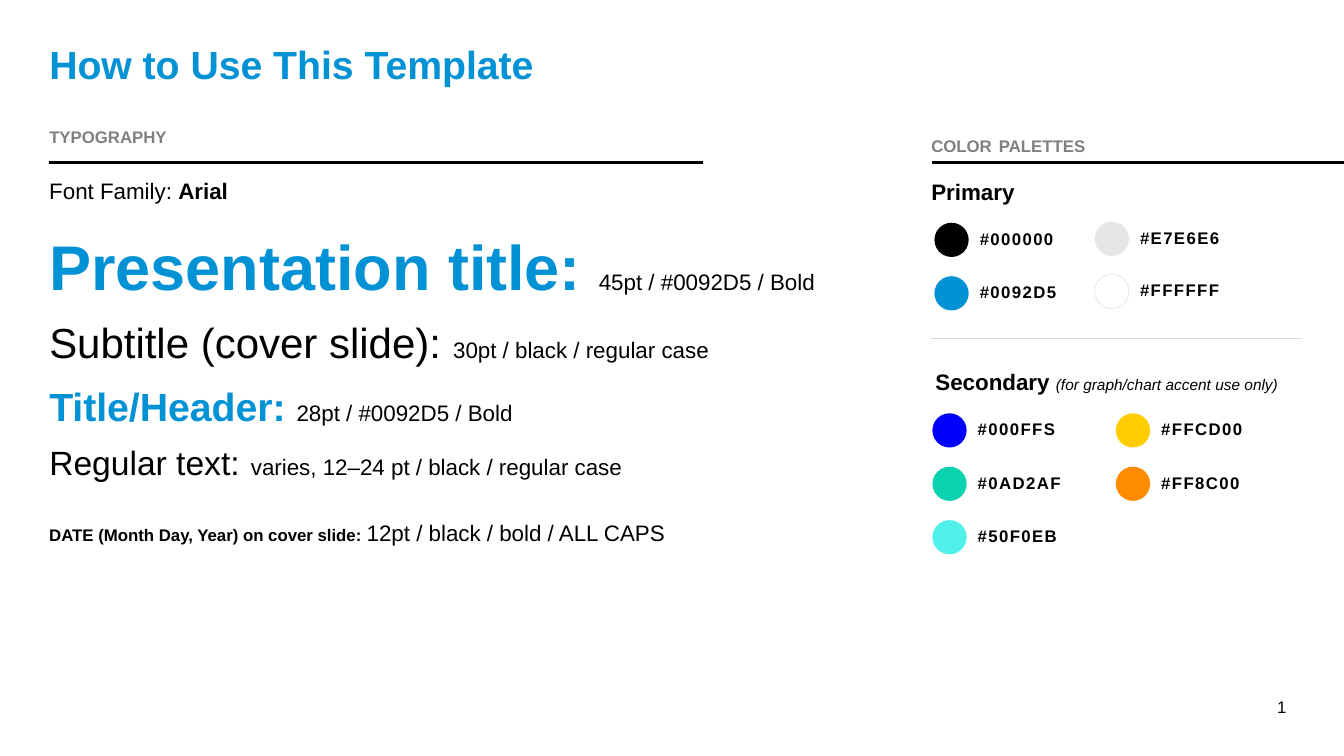
from dataclasses import dataclass
from typing import Any, Optional

from pptx import Presentation
from pptx.dml.color import RGBColor
from pptx.enum.shapes import MSO_CONNECTOR, MSO_SHAPE
from pptx.enum.text import MSO_ANCHOR, MSO_AUTO_SIZE, PP_ALIGN
from pptx.oxml import parse_xml
from pptx.oxml.ns import nsdecls, qn
from pptx.util import Inches, Pt

TOP, MIDDLE, BOTTOM = MSO_ANCHOR.TOP, MSO_ANCHOR.MIDDLE, MSO_ANCHOR.BOTTOM
LEFT, RIGHT = PP_ALIGN.LEFT, PP_ALIGN.RIGHT
GROW, FIXED = MSO_AUTO_SIZE.SHAPE_TO_FIT_TEXT, MSO_AUTO_SIZE.NONE
ELLIPSE, STRAIGHT = MSO_SHAPE.OVAL, MSO_CONNECTOR.STRAIGHT

CELL = Inches(0.1)
COLUMNS, ROWS = 133.33, 75
MARGIN = 3.9
RULE_ROW = 16.1
DOT = 3.4
LABEL_SHIFT = 4.5

BLACK, BLUE, GRAY = "000000", "0092D5", "808080"
PALE, WHITE, DIVIDER = "E7E6E6", "FFFFFF", "D9D9D9"

NORMAL = (1, 0.5, 1, 0.5)
FLUSH = (0, 0, 0, 0)
SIDES = (1, 0, 1, 0)


@dataclass(frozen=True)
class Span:
    text: str
    size: float = 16
    color: str = BLACK
    bold: bool = False
    italic: bool = False
    tracking: float = 0
    is_page_number: bool = False


@dataclass(frozen=True)
class TextBlock:
    left: float
    top: float
    width: float
    height: float
    spans: tuple[Span, ...]
    anchor: Any = TOP
    insets: tuple[float, ...] = NORMAL
    fit: Any = GROW
    wrap: bool = True
    spacing: float = 0.9
    align: Any = LEFT


@dataclass(frozen=True)
class Rule:
    start: float
    end: float
    row: float
    color: str = BLACK
    weight: float = 1.75


@dataclass(frozen=True)
class Swatch:
    label: str
    fill: str
    outline: Optional[str] = None


@dataclass(frozen=True)
class SwatchColumn:
    left: float
    top: float
    pitch: float
    swatches: tuple[Swatch, ...]


TEXTS = (
    TextBlock(MARGIN, 4, 123.2, 7.7,
              (Span("How to Use This Template", 28, BLUE, True),), fit=FIXED),
    TextBlock(MARGIN, 12.1, 13.8, 3,
              (Span("TYPOGRAPHY", 12, GRAY, True),), wrap=False, spacing=1),
    TextBlock(MARGIN, 17.9, 52.4, 2.4,
              (Span("Font Family: "), Span("Arial", bold=True)),
              BOTTOM, (1, 0, 0, 0)),
    TextBlock(MARGIN, 22.9, 79.4, 7.7,
              (Span("Presentation title: ", 45, BLUE, True),
               Span("45pt / #0092D5 / Bold")), fit=FIXED),
    TextBlock(MARGIN, 31.5, 94.1, 6.9,
              (Span("Subtitle (cover slide): ", 30),
               Span("30pt / black / regular case")), fit=FIXED),
    TextBlock(MARGIN, 38, 57.2, 5.3,
              (Span("Title/Header: ", 28, BLUE, True),
               Span("28pt / #0092D5 / Bold"))),
    TextBlock(MARGIN, 43.6, 59.5, 4.5,
              (Span("Regular text:", 24), Span("\t", 30),
               Span("varies, 12–24 pt / black / regular case")), insets=SIDES),
    TextBlock(MARGIN, 51, 85, 3.8,
              (Span("DATE (Month Day, Year) on cover slide: ", 12, bold=True),
               Span("12pt / black / bold / ALL CAPS")), fit=FIXED, spacing=1),
    TextBlock(91.4, 12.1, 17.5, 4,
              (Span("COLOR", 12, GRAY, True), Span(" ", 18, GRAY),
               Span("PALETTES", 12, GRAY, True)), wrap=False, spacing=1),
    TextBlock(92.4, 17.9, 12.3, 2.5,
              (Span("Primary", bold=True),), BOTTOM, FLUSH),
    TextBlock(92.8, 36.8, 35.2, 2.4,
              (Span("Secondary ", bold=True),
               Span("(for graph/chart accent use only)", 11, italic=True)),
              BOTTOM, FLUSH),
    TextBlock(98.6, 68.1, 30, 4, (Span("1", 12, is_page_number=True),),
              MIDDLE, fit=FIXED, spacing=1, align=RIGHT),
)

RULES = (
    Rule(4.9, 69.7, RULE_ROW),
    Rule(92.5, COLUMNS, RULE_ROW),
    Rule(92.4, 129.2, 33.6, DIVIDER, 0.5),
)

PALETTES = (
    SwatchColumn(92.7, 22.1, 5.3, (
        Swatch("#000000", BLACK), Swatch("#0092D5", BLUE))),
    SwatchColumn(108.6, 22, 5.2, (
        Swatch("#E7E6E6", PALE), Swatch("#FFFFFF", WHITE, PALE))),
    SwatchColumn(92.5, 41, 5.3, (
        Swatch("#000FFS", "0000FF"), Swatch("#0AD2AF", "0AD2AF"),
        Swatch("#50F0EB", "50F0EB"))),
    SwatchColumn(110.7, 41, 5.3, (
        Swatch("#FFCD00", "FFCD00"), Swatch("#FF8C00", "FF8C00"))),
)


def cells(count: float) -> int:
    return round(count * CELL)


def color(value: str) -> RGBColor:
    return RGBColor.from_string(value)


def set_format(target: Any, values: dict[str, Any]) -> None:
    for name, value in values.items():
        setattr(target, name, value)


def add_span(paragraph: Any, span: Span) -> None:
    run = paragraph.add_run()
    run.text = span.text
    set_format(run.font, {"name": "Arial", "size": Pt(span.size),
                          "bold": span.bold, "italic": span.italic})
    run.font.color.rgb = color(span.color)
    if span.tracking:
        run._r.get_or_add_rPr().set("spc", str(round(span.tracking * 100)))
    if span.is_page_number:
        field = run._r
        field.tag = qn("a:fld")
        field.set("id", "{B6F15528-21DE-4FAA-801E-634DDDAF4B2B}")
        field.set("type", "slidenum")


def add_text(slide: Any, block: TextBlock) -> None:
    box = slide.shapes.add_textbox(
        *map(cells, (block.left, block.top, block.width, block.height)))
    frame = box.text_frame
    sides = ("margin_left", "margin_top", "margin_right", "margin_bottom")
    set_format(frame, {"word_wrap": block.wrap, "auto_size": block.fit,
                       "vertical_anchor": block.anchor,
                       **dict(zip(sides, map(cells, block.insets)))})
    paragraph = frame.paragraphs[0]
    set_format(paragraph, {"line_spacing": block.spacing, "alignment": block.align})
    for span in block.spans:
        add_span(paragraph, span)


def add_rule(slide: Any, rule: Rule) -> None:
    row = cells(rule.row)
    connector = slide.shapes.add_connector(
        STRAIGHT, cells(rule.start), row, cells(rule.end), row)
    connector.line.color.rgb = color(rule.color)
    connector.line.width = Pt(rule.weight)
    connector._element.spPr.append(parse_xml(f"<a:effectLst {nsdecls('a')}/>"))


def add_swatch(slide: Any, left: float, top: float, swatch: Swatch) -> None:
    dot = slide.shapes.add_shape(ELLIPSE, *map(cells, (left, top, DOT, DOT)))
    dot.shadow.inherit = False
    dot.fill.solid()
    dot.fill.fore_color.rgb = color(swatch.fill)
    if swatch.outline:
        dot.line.color.rgb = color(swatch.outline)
        dot.line.width = Pt(0.5)
    else:
        dot.line.fill.background()
    label = Span(swatch.label, 12, bold=True, tracking=1)
    add_text(slide, TextBlock(left + LABEL_SHIFT, top + 0.8, 9, 1.8,
                              (label,), MIDDLE, FLUSH))


def main() -> None:
    presentation = Presentation()
    set_format(presentation, {"slide_width": cells(COLUMNS),
                              "slide_height": cells(ROWS)})
    slide = presentation.slides.add_slide(presentation.slide_layouts[6])
    for block in TEXTS:
        add_text(slide, block)
    for rule in RULES:
        add_rule(slide, rule)
    for column in PALETTES:
        for index, swatch in enumerate(column.swatches):
            add_swatch(slide, column.left, column.top + index * column.pitch, swatch)
    presentation.save("out.pptx")


if __name__ == "__main__":
    main()
